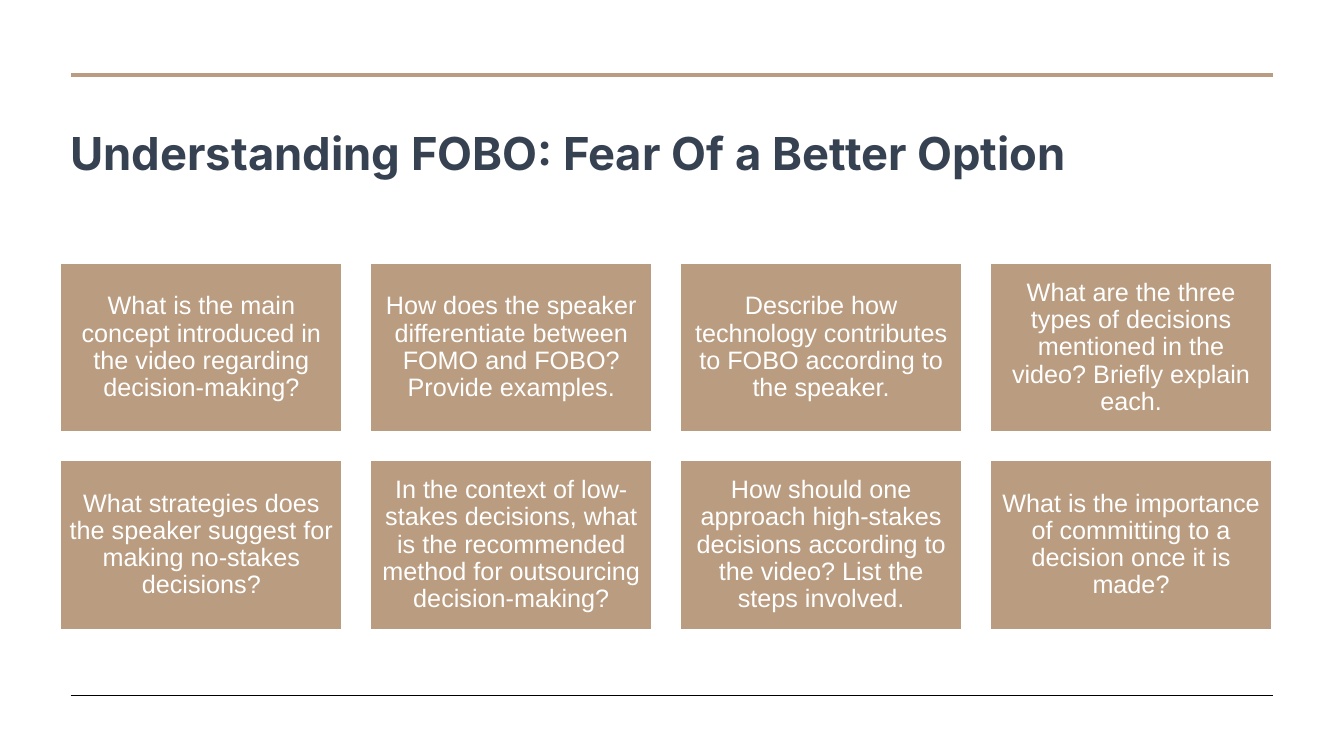
from lxml.etree import SubElement
from pptx import Presentation
from pptx.dml.color import RGBColor
from pptx.enum.shapes import MSO_CONNECTOR, MSO_SHAPE
from pptx.enum.text import MSO_ANCHOR, PP_ALIGN
from pptx.oxml.ns import qn
from pptx.util import Cm, Pt

QUESTIONS = [
    "What is the main concept introduced in the video regarding decision-making?",
    "How does the speaker differentiate between FOMO and FOBO? Provide examples.",
    "Describe how technology contributes to FOBO according to the speaker.",
    "What are the three types of decisions mentioned in the video? Briefly explain each.",
    "What strategies does the speaker suggest for making no-stakes decisions?",
    "In the context of low-stakes decisions, what is the recommended method for outsourcing decision-making?",
    "How should one approach high-stakes decisions according to the video? List the steps involved.",
    "What is the importance of committing to a decision once it is made?",
]
COLUMNS = 4
CARD_LEFT, CARD_TOP = 1.53, 6.63
CARD_WIDTH, CARD_HEIGHT = 7.09, 4.26
COLUMN_STEP, ROW_STEP = 7.81, 4.97


def color(value):
    return RGBColor.from_string(value)


def write(frame, text, font, size, fill, bold=False, align=PP_ALIGN.LEFT,
          anchor=MSO_ANCHOR.TOP, spacing=1.0):
    frame.word_wrap = True
    frame.vertical_anchor = anchor
    para = frame.paragraphs[0]
    para.alignment = align
    para.line_spacing = spacing
    span = para.add_run()
    span.text = text
    span.font.name = font
    span.font.size = Pt(size)
    span.font.bold = bold
    span.font.color.rgb = color(fill)


class QuestionSlide:
    tan, navy, white, black = "BA9C80", "364152", "FFFFFF", "000000"
    heading_font, body_font = "Inter", "Arial"

    def __init__(self, deck):
        self.page = deck.slides.add_slide(deck.slide_layouts[6])

    def rule(self, top, fill, weight):
        line = self.page.shapes.add_connector(
            MSO_CONNECTOR.STRAIGHT, Cm(1.78), Cm(top), Cm(32.08), Cm(top))
        line.line.color.rgb = color(fill)
        line.line.width = Pt(weight)
        SubElement(line._element.spPr, qn("a:effectLst"))

    def title(self, text):
        box = self.page.shapes.add_textbox(Cm(1.53), Cm(3.25), Cm(30.53), Cm(2.39))
        write(box.text_frame, text, self.heading_font, 32.4, self.navy,
              bold=True, spacing=0.85)

    def card(self, left, top, text):
        box = self.page.shapes.add_shape(
            MSO_SHAPE.RECTANGLE, Cm(left), Cm(top), Cm(CARD_WIDTH), Cm(CARD_HEIGHT))
        box.shadow.inherit = False
        box.fill.solid()
        box.fill.fore_color.rgb = color(self.tan)
        box.line.color.rgb = color(self.white)
        box.line.width = Pt(1)
        frame = box.text_frame
        frame.margin_left = frame.margin_right = Cm(0.18)
        frame.margin_top = frame.margin_bottom = Cm(0.18)
        write(frame, text, self.body_font, 18, self.white, align=PP_ALIGN.CENTER,
              anchor=MSO_ANCHOR.MIDDLE, spacing=0.9)


def main():
    deck = Presentation()
    deck.slide_width, deck.slide_height = Cm(33.87), Cm(19.05)
    slide = QuestionSlide(deck)
    slide.rule(1.88, slide.tan, 3)
    slide.rule(17.52, slide.black, 0.5)
    slide.title("Understanding FOBO: Fear Of a Better Option")
    for index, question in enumerate(QUESTIONS):
        row, column = divmod(index, COLUMNS)
        slide.card(CARD_LEFT + column * COLUMN_STEP, CARD_TOP + row * ROW_STEP, question)
    deck.save("out.pptx")


if __name__ == "__main__":
    main()
